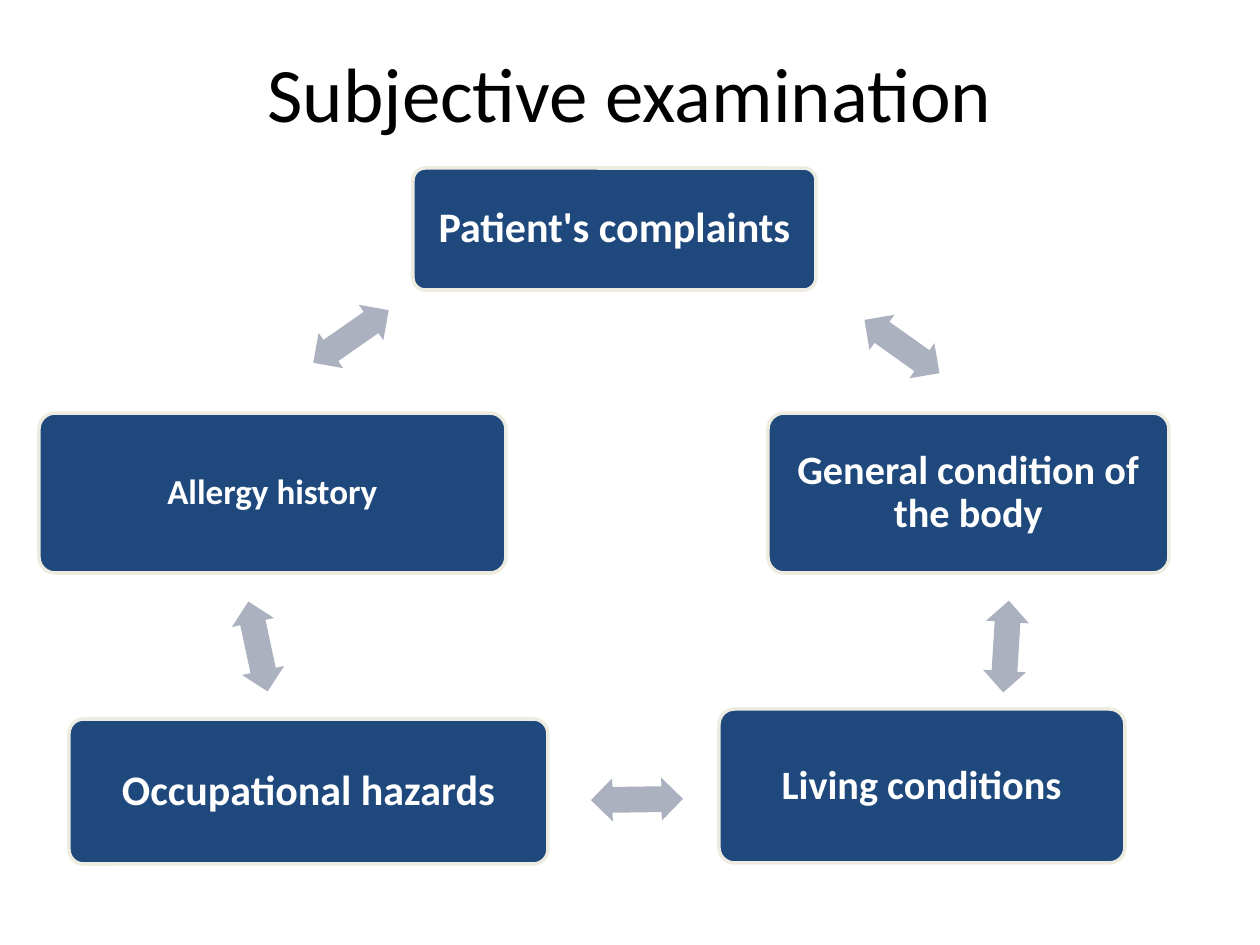
from pptx import Presentation
from pptx.dml.color import RGBColor
from pptx.enum.shapes import MSO_SHAPE
from pptx.enum.text import MSO_ANCHOR, PP_ALIGN
from pptx.util import Emu, Pt

ROUNDED = MSO_SHAPE.ROUNDED_RECTANGLE
DOUBLE_ARROW = MSO_SHAPE.LEFT_RIGHT_ARROW
MIDDLE = MSO_ANCHOR.MIDDLE
CENTER = PP_ALIGN.CENTER
PX_PER_INCH = 126


def px(n):
    """Turn pixels into EMU."""
    return Emu(round(n * 914400 / PX_PER_INCH))


def rgb(value):
    """Turn a hex string into a colour."""
    return RGBColor.from_string(value)


class Deck:
    """Holds the style and the current slide."""

    font = "Calibri"
    ink, white = "000000", "FFFFFF"
    navy, cream, grey = "1F497D", "EEECE1", "ACB1BF"
    inset = 13
    arrow_size = (92, 43)

    def __init__(self, prs):
        self.s = prs.slides.add_slide(prs.slide_layouts[6])

    def label(self, sp, text, size, color, bold=False, spacing=1.0):
        tf = sp.text_frame
        tf.text = text
        tf.word_wrap = True
        tf.vertical_anchor = MIDDLE
        p = tf.paragraphs[0]
        p.alignment = CENTER
        p.line_spacing = spacing
        font = p.runs[0].font
        font.name, font.size, font.bold = self.font, Pt(size), bold
        font.color.rgb = rgb(color)
        return tf

    def shape(self, kind, box, fill):
        sp = self.s.shapes.add_shape(kind, *map(px, box))
        sp.shadow.inherit = False
        sp.fill.solid()
        sp.fill.fore_color.rgb = rgb(fill)
        return sp

    def title(self, text, box):
        sp = self.s.shapes.add_textbox(*map(px, box))
        self.label(sp, text, 44, self.ink)

    def topic(self, text, box, size):
        sp = self.shape(ROUNDED, box, self.navy)
        sp.adjustments[0] = 0.1
        sp.line.color.rgb = rgb(self.cream)
        sp.line.width = Pt(2)
        tf = self.label(sp, text, size, self.white, bold=True, spacing=0.9)
        tf.margin_left = tf.margin_right = px(self.inset)
        tf.margin_top = tf.margin_bottom = px(self.inset)

    def arrow(self, left, top, angle):
        sp = self.shape(DOUBLE_ARROW, (left, top, *self.arrow_size), self.grey)
        sp.adjustments[0], sp.adjustments[1] = 0.6, 0.5
        sp.line.fill.background()
        sp.rotation = angle


TOPICS = [
    ("Patient's complaints", (413, 168, 403, 122), 24),
    ("General condition of the body", (768, 413, 401, 160), 23),
    ("Living conditions", (719, 709, 406, 154), 23),
    ("Occupational hazards", (69, 719, 479, 145), 24),
    ("Allergy history", (39, 413, 467, 160), 20),
]
ARROWS = [
    (856, 325, 35.4),
    (960, 625, 93.5),
    (591, 778, 179.2),
    (212, 625, 257.9),
    (305, 315, 325.1),
]


def main():
    prs = Presentation()
    prs.slide_width, prs.slide_height = px(1260), px(945)
    deck = Deck(prs)
    deck.title("Subjective examination", (0, 0, 1260, 184))
    for topic in TOPICS:
        deck.topic(*topic)
    for arrow in ARROWS:
        deck.arrow(*arrow)
    prs.save("out.pptx")


if __name__ == "__main__":
    main()
